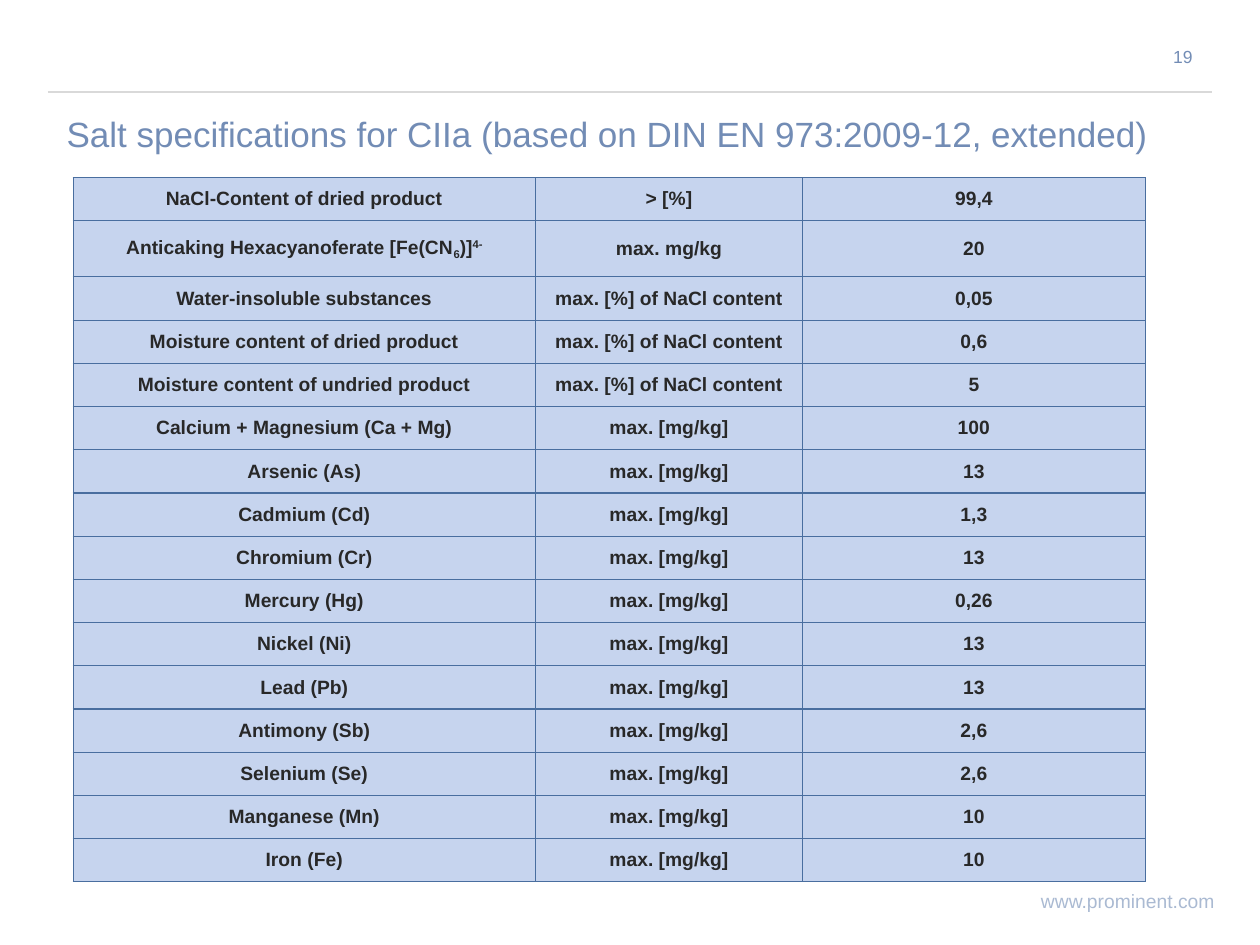
from dataclasses import dataclass, field

from lxml.etree import SubElement
from pptx import Presentation
from pptx.dml.color import RGBColor
from pptx.enum.shapes import MSO_CONNECTOR
from pptx.enum.text import MSO_ANCHOR, PP_ALIGN
from pptx.oxml.ns import qn
from pptx.slide import Slide
from pptx.util import Inches, Pt

COLOURS = {
    "accent": "728CB5",
    "rule": "D9D9D9",
    "border": "496E9F",
    "cell": "C6D4EE",
    "ink": "282828",
}
BASELINES = {"sub": "-25000", "super": "30000"}
PERCENT = "max. [%] of NaCl content"
TRACE = "max. [mg/kg]"

HEXACYANOFERRATE = [
    ("Anticaking Hexacyanoferate [Fe(CN", None),
    ("6", "sub"),
    (")]", None),
    ("4-", "super"),
]
TRACE_LIMITS = {
    "Calcium + Magnesium (Ca + Mg)": "100",
    "Arsenic (As)": "13",
    "Cadmium (Cd)": "1,3",
    "Chromium (Cr)": "13",
    "Mercury (Hg)": "0,26",
    "Nickel (Ni)": "13",
    "Lead (Pb)": "13",
    "Antimony (Sb)": "2,6",
    "Selenium (Se)": "2,6",
    "Manganese (Mn)": "10",
    "Iron (Fe)": "10",
}
SPECIFICATIONS = [
    ("NaCl-Content of dried product", "> [%]", "99,4"),
    (HEXACYANOFERRATE, "max. mg/kg", "20"),
    ("Water-insoluble substances", PERCENT, "0,05"),
    ("Moisture content of dried product", PERCENT, "0,6"),
    ("Moisture content of undried product", PERCENT, "5"),
] + [(name, TRACE, limit) for name, limit in TRACE_LIMITS.items()]


def colour(name):
    return RGBColor.from_string(COLOURS[name])


@dataclass
class SlideBuilder:
    page: Slide
    font: str = "Arial"
    unit: int = field(default=Inches(0.1))

    def grid(self, *counts):
        return [round(count * self.unit) for count in counts]

    def style(self, span, size, name, bold=False):
        span.font.name = self.font
        span.font.size = Pt(size)
        span.font.bold = bold
        span.font.color.rgb = colour(name)

    def rule(self, left, right, row):
        line = self.page.shapes.add_connector(
            MSO_CONNECTOR.STRAIGHT, *self.grid(left, row, right, row)
        )
        line.line.color.rgb = colour("rule")
        line.line.width = Pt(1)
        SubElement(line._element.spPr, qn("a:effectLst"))

    def text(self, place, words, size, align=PP_ALIGN.LEFT,
             anchor=MSO_ANCHOR.TOP, inset=1, alpha=None):
        box = self.page.shapes.add_textbox(*self.grid(*place))
        frame = box.text_frame
        frame.word_wrap = True
        frame.vertical_anchor = anchor
        frame.margin_left = self.grid(inset)[0]
        frame.text = words
        para = frame.paragraphs[0]
        para.alignment = align
        span = para.runs[0]
        self.style(span, size, "accent")
        if alpha:
            tint = span._r.rPr.find(".//" + qn("a:srgbClr"))
            SubElement(tint, qn("a:alpha"), val=str(alpha * 1000))

    def cell(self, cell, content):
        cell.margin_left = cell.margin_right = 0
        cell.margin_top = cell.margin_bottom = 0
        cell.vertical_anchor = MSO_ANCHOR.MIDDLE
        para = cell.text_frame.paragraphs[0]
        para.alignment = PP_ALIGN.CENTER
        parts = [(content, None)] if isinstance(content, str) else content
        for words, shift in parts:
            span = para.add_run()
            span.text = words
            self.style(span, 11, "ink", bold=True)
            if shift:
                span._r.rPr.set("baseline", BASELINES[shift])
        properties = cell._tc.get_or_add_tcPr()
        for side in ("lnL", "lnR", "lnT", "lnB"):
            edge = SubElement(properties, qn("a:" + side), w=str(Pt(0.75)))
            paint = SubElement(edge, qn("a:solidFill"))
            SubElement(paint, qn("a:srgbClr"), val=COLOURS["border"])
        cell.fill.solid()
        cell.fill.fore_color.rgb = colour("cell")

    def table(self, left, top, widths, heights, rows):
        place = self.grid(left, top, sum(widths), sum(heights))
        table = self.page.shapes.add_table(len(rows), len(widths), *place).table
        table.first_row = table.horz_banding = False
        for column, width in zip(table.columns, self.grid(*widths)):
            column.width = width
        for row, height, values in zip(table.rows, self.grid(*heights), rows):
            row.height = height
            for cell, content in zip(row.cells, values):
                self.cell(cell, content)


def main():
    deck = Presentation()
    deck.slide_width, deck.slide_height = Inches(10), Inches(7.5)
    builder = SlideBuilder(deck.slides.add_slide(deck.slide_layouts[6]))

    builder.rule(3.8, 96.2, 7.3)
    builder.text((81.3, 70.1, 16.1, 3.4), "www.prominent.com", 11,
                 align=PP_ALIGN.RIGHT, alpha=60)
    builder.text((90.2, 2.5, 7.8, 4), "19", 10,
                 anchor=MSO_ANCHOR.MIDDLE, inset=2.9)
    builder.text(
        (4.3, 8.4, 93.2, 7.1),
        "Salt specifications for CIIa (based on DIN EN 973:2009-12, extended)",
        20,
    )
    heights = [4.45 if row[0] is HEXACYANOFERRATE else 3.43
               for row in SPECIFICATIONS]
    builder.table(5.8, 14.1, (36.7, 21.2, 27.2), heights, SPECIFICATIONS)

    deck.save("out.pptx")


if __name__ == "__main__":
    main()
